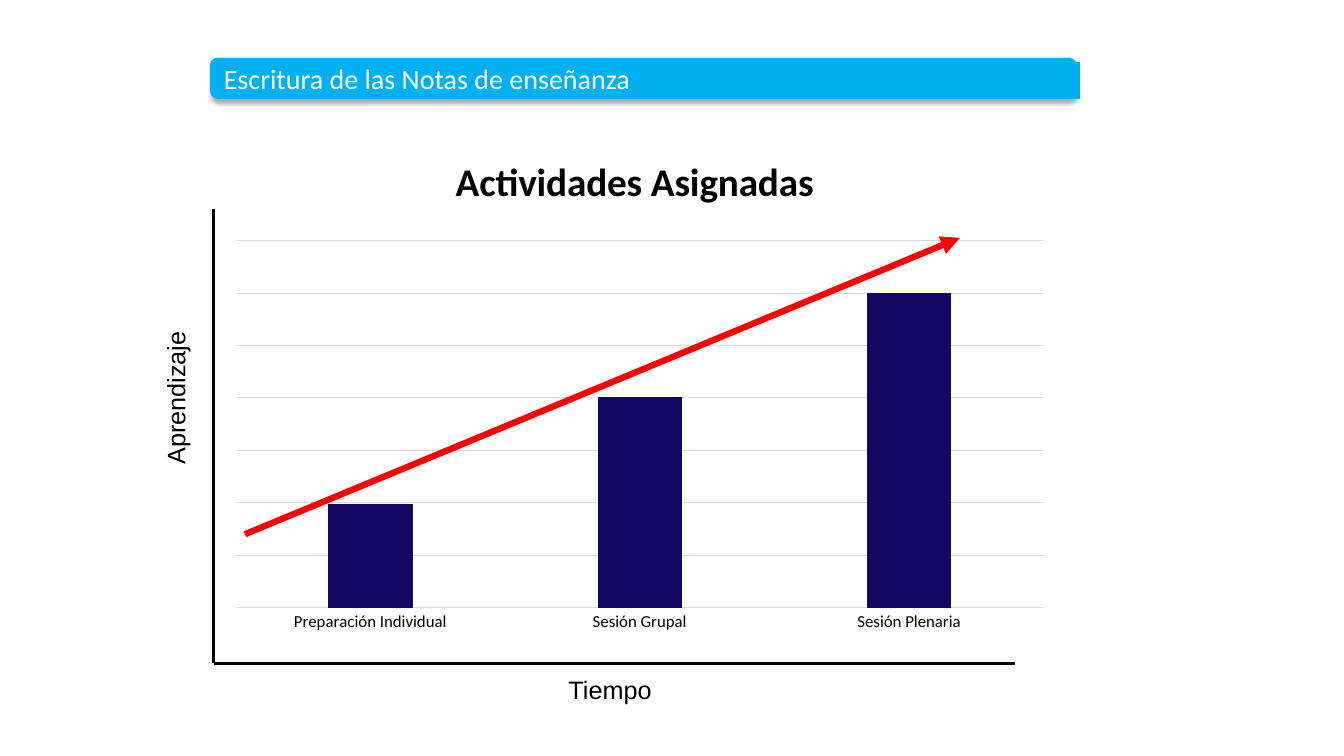
import pptx
import pptx.chart.data
import pptx.dml.color
import pptx.enum.chart
import pptx.enum.shapes
import pptx.enum.text
import pptx.oxml
import pptx.oxml.ns
import pptx.util
from pptx.util import Inches

BLACK = pptx.dml.color.RGBColor(0x00, 0x00, 0x00)
WHITE = pptx.dml.color.RGBColor(0xFF, 0xFF, 0xFF)
GRAY = pptx.dml.color.RGBColor(0xD9, 0xD9, 0xD9)
NAVY = pptx.dml.color.RGBColor(0x14, 0x07, 0x61)
RED = pptx.dml.color.RGBColor(0xFF, 0x00, 0x00)
CYAN = pptx.dml.color.RGBColor(0x00, 0xB0, 0xF0)
GRID_STEP = 16.67  # six steps reach the tallest bar, one more is left free


def xml(tag, content, prefix="a"):
    namespaces = pptx.oxml.ns.nsdecls(prefix)
    return pptx.oxml.parse_xml(f"<{prefix}:{tag} {namespaces}>{content}</{prefix}:{tag}>")


def write(paragraph, text, size, font, color):
    run = paragraph.add_run()
    run.text = text
    run.font.size = pptx.util.Pt(size)
    run.font.name = font
    run.font.color.rgb = color
    return run


presentation = pptx.Presentation()
presentation.slide_width = Inches(13.33)
presentation.slide_height = Inches(7.5)
slide = presentation.slides.add_slide(presentation.slide_layouts[5])

# Chart of assigned activities
activities = pptx.chart.data.CategoryChartData()
activities.categories = ["Preparación Individual", "Sesión Grupal", "Sesión Plenaria"]
activities.add_series("Series 1", (33, 67, 100))
chart = slide.shapes.add_chart(
    pptx.enum.chart.XL_CHART_TYPE.COLUMN_CLUSTERED,
    Inches(1.95), Inches(1.26), Inches(8.62), Inches(5.13), activities).chart
chart.has_legend = False
chart.font.size = pptx.util.Pt(10)
chart.font.name = "Calibri"
chart.font.color.rgb = BLACK

chart.has_title = True
heading = chart.chart_title.text_frame.paragraphs[0]
write(heading, "Actividades Asignadas", 28, "Calibri", BLACK).font.bold = True
chart.chart_title.include_in_layout = False

columns = chart.plots[0]
columns.gap_width = 219
columns.overlap = -27
columns.vary_by_categories = False
columns.series[0].format.fill.solid()
columns.series[0].format.fill.fore_color.rgb = NAVY

stages = chart.category_axis
stages.major_tick_mark = pptx.enum.chart.XL_TICK_MARK.NONE
stages.tick_labels.font.size = pptx.util.Pt(12)
stages.tick_labels.font.name = "Calibri"
stages.tick_labels.font.color.rgb = BLACK

learning = chart.value_axis
learning.visible = False
learning.minimum_scale = 0
learning.maximum_scale = 7 * GRID_STEP
learning.major_unit = GRID_STEP
learning.has_major_gridlines = True
for thin_line in (stages.format.line, learning.major_gridlines.format.line):
    thin_line.color.rgb = GRAY
    thin_line.width = pptx.util.Pt(0.75)

# Fixed places for the chart title and the plot
title_place = xml("layout", '<c:manualLayout><c:xMode val="edge"/><c:yMode val="edge"/>'
                  '<c:x val="0.29"/><c:y val="0.04"/></c:manualLayout>', "c")
plot_place = xml("layout", '<c:manualLayout><c:layoutTarget val="inner"/>'
                 '<c:xMode val="edge"/><c:yMode val="edge"/><c:x val="0.045"/>'
                 '<c:y val="0.22"/><c:w val="0.93"/><c:h val="0.71"/></c:manualLayout>', "c")
title_element = chart.chart_title._element
plot_element = chart._chartSpace.chart.plotArea
for owner in (title_element, plot_element):
    for old_layout in owner.findall(pptx.oxml.ns.qn("c:layout")):
        owner.remove(old_layout)
title_element.find(pptx.oxml.ns.qn("c:tx")).addnext(title_place)
plot_element.insert(0, plot_place)

# Axis names
for name, left, top, width, angle in (
        ("Aprendizaje", 0.39, 3.75, 2.7, 270),
        ("Tiempo", 5.54, 6.64, 1.03, 0)):
    axis_name = slide.shapes.add_textbox(Inches(left), Inches(top), Inches(width), Inches(0.4))
    axis_name.rotation = angle
    axis_name.text_frame.word_wrap = True
    axis_name.text_frame.auto_size = pptx.enum.text.MSO_AUTO_SIZE.SHAPE_TO_FIT_TEXT
    paragraph = axis_name.text_frame.paragraphs[0]
    paragraph.alignment = pptx.enum.text.PP_ALIGN.CENTER if angle else pptx.enum.text.PP_ALIGN.LEFT
    write(paragraph, name, 18, "Arial", BLACK)

# Axis lines and rising arrow
for x1, y1, x2, y2, color, width in (
        (2.12, 6.58, 10.07, 6.58, BLACK, 2.25),
        (2.12, 6.58, 2.12, 2.07, BLACK, 2.25),
        (2.43, 5.3, 9.52, 2.36, RED, 4.5)):
    stroke = slide.shapes.add_connector(
        pptx.enum.shapes.MSO_CONNECTOR.STRAIGHT,
        Inches(x1), Inches(y1), Inches(x2), Inches(y2))
    stroke.line.color.rgb = color
    stroke.line.width = pptx.util.Pt(width)
    if color == RED:
        stroke.line._get_or_add_ln().append(pptx.oxml.parse_xml(
            f'<a:tailEnd {pptx.oxml.ns.nsdecls("a")} type="triangle"/>'))
    stroke._element.spPr.append(xml("effectLst", ""))

# Banner with the slide title
banner = slide.shapes.add_shape(
    pptx.enum.shapes.MSO_SHAPE.ROUNDED_RECTANGLE,
    Inches(2.09), Inches(0.58), Inches(8.58), Inches(0.39))
title = slide.shapes.title
title.left, title.top = Inches(2.16), Inches(0.62)
title.width, title.height = Inches(8.55), Inches(0.36)
banner.element.addnext(title.element)
for part, line_width in ((banner, 1), (title, 0.75)):
    part.fill.solid()
    part.fill.fore_color.rgb = CYAN
    part.line.color.rgb = CYAN
    part.line.width = pptx.util.Pt(line_width)
banner.element.spPr.append(xml(
    "effectLst",
    '<a:outerShdw blurRad="44450" dist="27940" dir="5400000" rotWithShape="0">'
    '<a:srgbClr val="000000"><a:alpha val="32000"/></a:srgbClr></a:outerShdw>'))

frame = title.text_frame
frame.word_wrap = True
frame.auto_size = pptx.enum.text.MSO_AUTO_SIZE.NONE
frame.vertical_anchor = pptx.enum.text.MSO_ANCHOR.MIDDLE
frame.margin_left = frame.margin_right = Inches(0.06)
frame.margin_top = frame.margin_bottom = Inches(0.06)
paragraph = frame.paragraphs[0]
paragraph.alignment = pptx.enum.text.PP_ALIGN.LEFT
paragraph.line_spacing = 0.9
write(paragraph, "Escritura de las Notas de enseñanza", 20, "Calibri", WHITE)

presentation.save("out.pptx")
